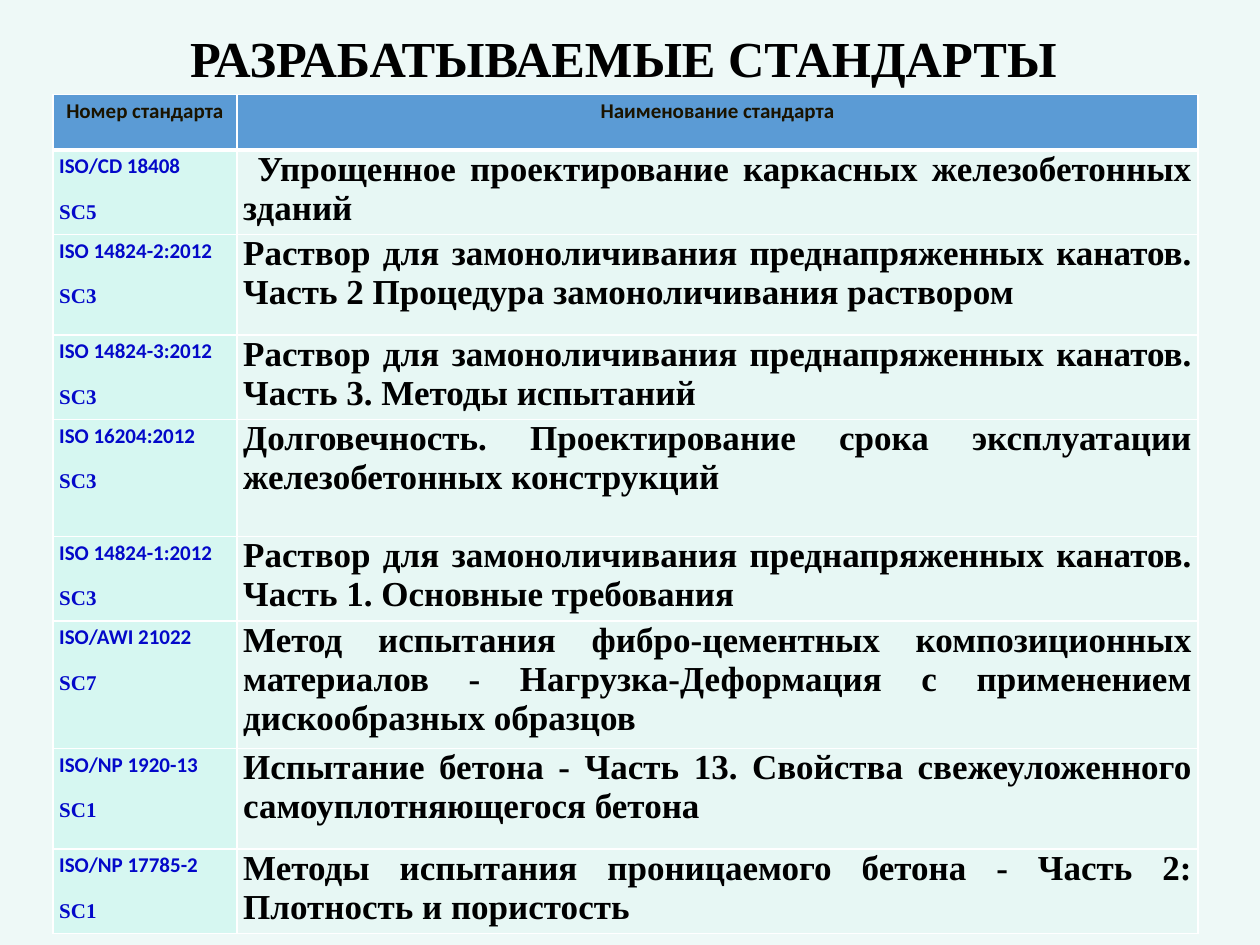
from lxml.etree import SubElement
from pptx import Presentation
from pptx.dml.color import RGBColor
from pptx.enum.text import MSO_ANCHOR, PP_ALIGN
from pptx.oxml.ns import qn
from pptx.util import Inches, Pt

TITLE = "РАЗРАБАТЫВАЕМЫЕ СТАНДАРТЫ "
HEADERS = ["Номер стандарта", "Наименование стандарта"]
MORTAR = "Раствор для замоноличивания преднапряженных канатов. "
# Number, subcommittee, name, row height in inches
STANDARDS = [
    ("ISO/CD 18408", "SC5",
     " Упрощенное проектирование каркасных железобетонных зданий", 0.67),
    ("ISO 14824-2:2012", "SC3",
     MORTAR + "Часть 2 Процедура замоноличивания раствором", 0.8),
    ("ISO 14824-3:2012", "SC3", MORTAR + "Часть 3. Методы испытаний", 0.67),
    ("ISO 16204:2012", "SC3",
     "Долговечность. Проектирование срока эксплуатации железобетонных конструкций", 0.93),
    ("ISO 14824-1:2012", "SC3", MORTAR + "Часть 1. Основные требования", 0.67),
    ("ISO/AWI 21022", "SC7",
     "Метод испытания фибро-цементных композиционных материалов - "
     "Нагрузка-Деформация с применением дискообразных образцов", 1.01),
    ("ISO/NP 1920-13", "SC1",
     "Испытание бетона - Часть 13. Свойства свежеуложенного самоуплотняющегося бетона", 0.8),
    ("ISO/NP 17785-2", "SC1",
     "Методы испытания проницаемого бетона - Часть 2: Плотность и пористость", 0.67),
]
COL_WIDTHS = [1.46, 7.63]
ROW_HEIGHTS = [0.44] + [row[-1] for row in STANDARDS]
SERIF, SANS = "Times New Roman", "Calibri"
HEAD_FILL, CODE_FILL, NAME_FILL = "5B9BD5", "D6F7F1", "E7F7F4"


def rgb(color):
    return RGBColor.from_string(color)


def write(p, text, font=SERIF, size=20, color="000000",
          align=PP_ALIGN.JUSTIFY, spacing=None, after=None):
    p.alignment = align
    if spacing:
        p.line_spacing = spacing
    if after:
        p.space_after = Pt(after)
    r = p.add_run()
    r.text = text
    r.font.name, r.font.size, r.font.bold = font, Pt(size), True
    r.font.color.rgb = rgb(color)


def style_cell(cell, fill, top=1, bottom=1):
    cell.margin_left = cell.margin_right = Inches(0.05)
    cell.margin_top = cell.margin_bottom = 0
    cell.fill.solid()
    cell.fill.fore_color.rgb = rgb(fill)
    # White borders go before the fill
    tcPr = cell._tc.get_or_add_tcPr()
    for i, (side, width) in enumerate(zip("LRTB", (1, 1, top, bottom))):
        ln = SubElement(tcPr, qn(f"a:ln{side}"), w=str(Pt(width)))
        SubElement(SubElement(ln, qn("a:solidFill")), qn("a:srgbClr"), val="FFFFFF")
        tcPr.insert(i, ln)


prs = Presentation()
prs.slide_width, prs.slide_height = Inches(10), Inches(7.5)
s = prs.slides.add_slide(prs.slide_layouts[6])
s.background.fill.solid()
s.background.fill.fore_color.rgb = rgb("EEF9F7")

# Title
tf = s.shapes.add_textbox(Inches(1.25), Inches(0.17), Inches(7.5), Inches(0.58)).text_frame
tf.word_wrap = True
tf.vertical_anchor = MSO_ANCHOR.BOTTOM
write(tf.paragraphs[0], TITLE, size=28.8, align=PP_ALIGN.CENTER, spacing=0.9)

# Table grid
table = s.shapes.add_table(
    len(ROW_HEIGHTS), len(COL_WIDTHS), Inches(0.42), Inches(0.75),
    Inches(sum(COL_WIDTHS)), Inches(sum(ROW_HEIGHTS))).table
for col, width in zip(table.columns, COL_WIDTHS):
    col.width = Inches(width)
for row, height in zip(table.rows, ROW_HEIGHTS):
    row.height = Inches(height)

# Header row
small = dict(size=12, spacing=1.15, after=10)
for c, text in enumerate(HEADERS):
    cell = table.cell(0, c)
    style_cell(cell, HEAD_FILL, bottom=3)
    write(cell.text_frame.paragraphs[0], text, font=SANS, color="1A1300",
          align=PP_ALIGN.CENTER, **small)

# One row per standard
for i, (number, committee, name, _) in enumerate(STANDARDS, start=1):
    code_cell, name_cell = table.cell(i, 0), table.cell(i, 1)
    top = 3 if i == 1 else 1
    style_cell(code_cell, CODE_FILL, top)
    style_cell(name_cell, NAME_FILL, top)
    tf = code_cell.text_frame
    write(tf.paragraphs[0], number, font=SANS, color="0308C9", **small)
    write(tf.add_paragraph(), committee, color="0308C9", **small)
    write(name_cell.text_frame.paragraphs[0], name)

prs.save("out.pptx")
